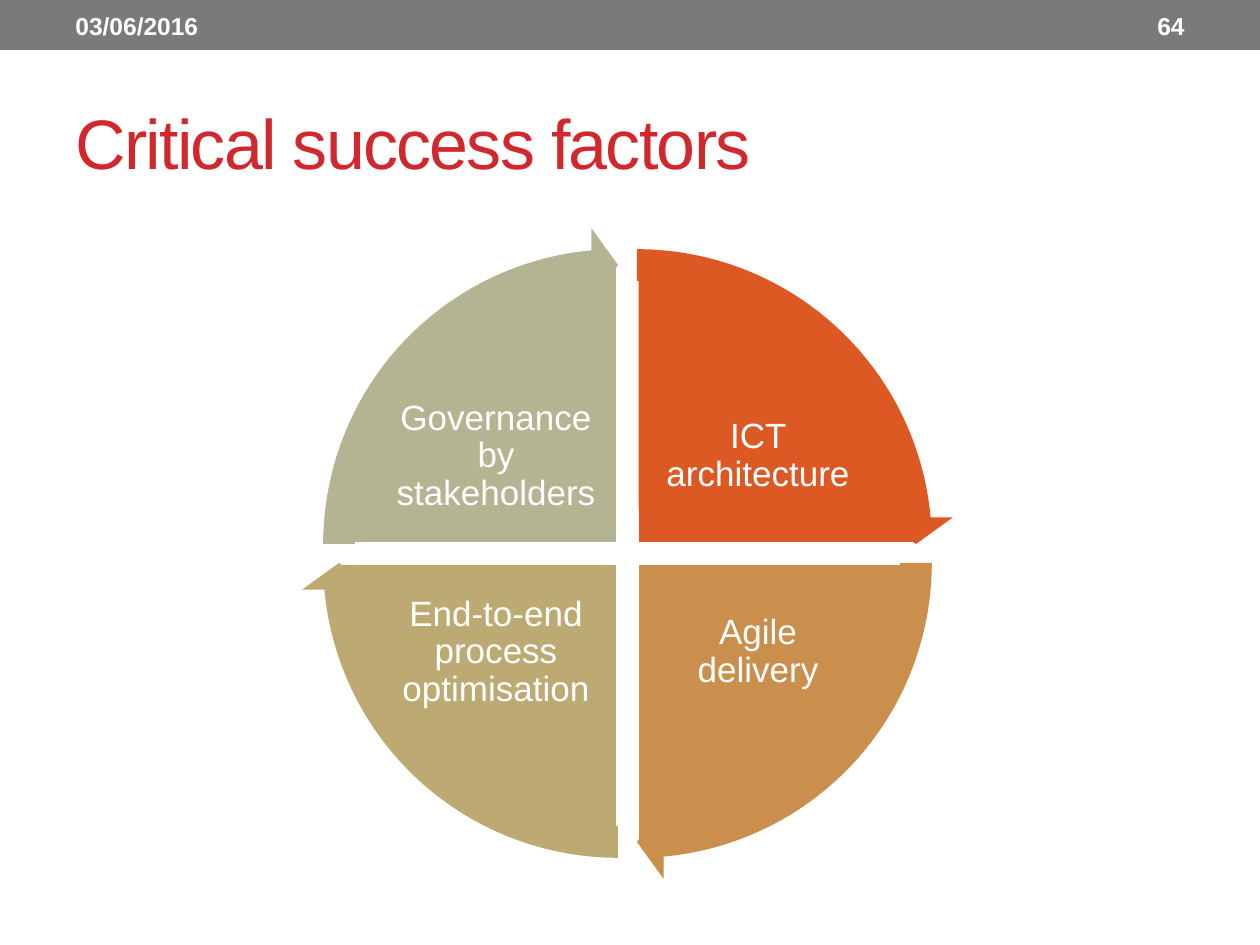
from dataclasses import dataclass

from pptx import Presentation
from pptx.dml.color import RGBColor
from pptx.enum.shapes import MSO_SHAPE
from pptx.enum.text import MSO_ANCHOR, PP_ALIGN
from pptx.util import Emu, Pt

EMU_PER_PX = 914400 / 126
QUARTER_TURN = 54
FULL_TURN = 216
ARROW_SWEEP = 50.725
WHEEL_SIZE = 564
ARROW_MARGIN = 35


@dataclass(frozen=True)
class Theme:
    font: str = "Arial"
    banner: str = "7A7A7A"
    title: str = "D1282E"
    light: str = "FFFFFF"
    title_size: int = 40
    label_size: int = 20
    banner_size: int = 14
    gap_width: float = 2.08


THEME = Theme()

FACTORS = [
    ("ICT architecture", "DC5924", 162, (355, 262), (654, 379)),
    ("Agile delivery", "CA8E4D", 0, (355, 281), (654, 575)),
    ("End-to-end process optimisation", "BDAA72", 54, (336, 281), (392, 575)),
    ("Governance by stakeholders", "B4B392", 108, (336, 262), (392, 379)),
]


def px(length):
    return Emu(round(length * EMU_PER_PX))


def add_filled(slide, preset, box, color, adjustments=()):
    figure = slide.shapes.add_shape(preset, *map(px, box))
    figure.shadow.inherit = False
    figure.fill.solid()
    figure.fill.fore_color.rgb = RGBColor.from_string(color)
    figure.line.fill.background()
    for index, value in enumerate(adjustments):
        figure.adjustments[index] = value
    return figure


def add_text(slide, wording, box, size, color, align=PP_ALIGN.LEFT,
             bold=False, inset=None, line_spacing=None, tracking=None):
    frame = slide.shapes.add_textbox(*map(px, box)).text_frame
    frame.word_wrap = True
    frame.vertical_anchor = MSO_ANCHOR.MIDDLE
    if inset is not None:
        frame.margin_left = frame.margin_right = px(inset)
        frame.margin_top = frame.margin_bottom = px(inset)
    paragraph = frame.paragraphs[0]
    paragraph.alignment = align
    if line_spacing is not None:
        paragraph.line_spacing = line_spacing
    run = paragraph.add_run()
    run.text = wording
    run.font.name = THEME.font
    run.font.size = Pt(size)
    run.font.bold = bold
    run.font.color.rgb = RGBColor.from_string(color)
    if tracking is not None:
        run.font._element.set("spc", str(tracking * 100))


def add_sector(slide, color, start, corner):
    end = (start + QUARTER_TURN) % FULL_TURN
    sector = add_filled(slide, MSO_SHAPE.PIE, (*corner, WHEEL_SIZE, WHEEL_SIZE),
                        color, (start, end if start != 108 else 162))
    sector.line.color.rgb = RGBColor.from_string(THEME.light)
    sector.line.width = Pt(THEME.gap_width)


def add_rim_arrow(slide, color, start, corner):
    left, top = (edge - ARROW_MARGIN for edge in corner)
    size = WHEEL_SIZE + 2 * ARROW_MARGIN
    add_filled(slide, MSO_SHAPE.CIRCULAR_ARROW, (left, top, size, size), color,
               (0.05, 3.28, start + ARROW_SWEEP, start, 0.06))


def add_banner(slide):
    add_filled(slide, MSO_SHAPE.RECTANGLE, (0, 0, 1260, 50), THEME.banner)
    add_text(slide, "03/06/2016", (63, 3, 399, 45), THEME.banner_size,
             THEME.light, bold=True)
    add_text(slide, "64", (1050, 3, 147, 45), THEME.banner_size,
             THEME.light, PP_ALIGN.RIGHT, bold=True)


def add_cycle(slide):
    for label, color, start, corner, label_corner in FACTORS:
        add_sector(slide, color, start, corner)
        add_text(slide, label, (*label_corner, 208, 155), THEME.label_size,
                 THEME.light, PP_ALIGN.CENTER, inset=4, line_spacing=0.9)
    for label, color, start, corner, label_corner in FACTORS:
        add_rim_arrow(slide, color, start, corner)


def main():
    deck = Presentation()
    deck.slide_width, deck.slide_height = px(1260), px(945)
    slide = deck.slides.add_slide(deck.slide_layouts[6])
    add_banner(slide)
    add_text(slide, "Critical success factors", (63, 73, 1134, 136),
             THEME.title_size, THEME.title, tracking=-1)
    add_cycle(slide)
    deck.save("out.pptx")


if __name__ == "__main__":
    main()
